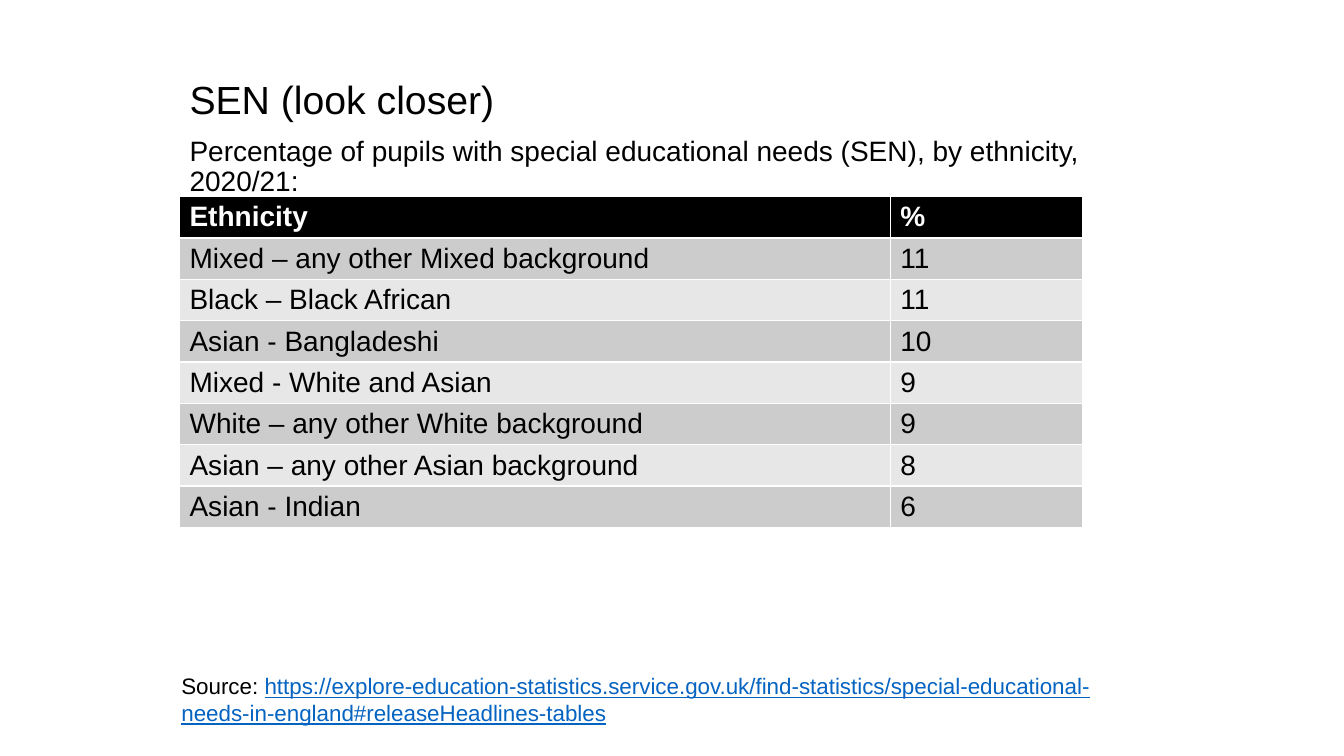
from pptx import Presentation
from pptx.dml.color import RGBColor
from pptx.enum import text
from pptx.util import Inches, Pt

BLACK = RGBColor(0x00, 0x00, 0x00)
WHITE = RGBColor(0xFF, 0xFF, 0xFF)
DARK = RGBColor(0xCC, 0xCC, 0xCC)
LIGHT = RGBColor(0xE7, 0xE7, 0xE7)
BLUE = RGBColor(0x05, 0x63, 0xC1)


def style(run, size, color=BLACK, bold=False):
    run.font.name = "Arial"
    run.font.size = Pt(size)
    run.font.color.rgb = color
    run.font.bold = bold


deck = Presentation()
deck.slide_width = Inches(13.33)
deck.slide_height = Inches(7.5)
slide = deck.slides.add_slide(deck.slide_layouts[0])
title = slide.shapes.title.element
title.getparent().remove(title)

intro = slide.placeholders[1]
intro.left, intro.top = Inches(1.78), Inches(0.75)
intro.width, intro.height = Inches(10), Inches(5.8)
frame = intro.text_frame
frame.text = (
    "SEN (look closer)\n"
    "Percentage of pupils with special educational needs (SEN), by ethnicity, 2020/21:"
)
frame.auto_size = text.MSO_AUTO_SIZE.NONE
frame.vertical_anchor = text.MSO_ANCHOR.TOP
for para, size in zip(frame.paragraphs, (28, 20)):
    para.alignment = text.PP_ALIGN.LEFT
    para.line_spacing = 0.9
    para.space_before = Pt(10)
    style(para.runs[0], size)

rows = [
    ("Ethnicity", "%"),
    ("Mixed – any other Mixed background", "11"),
    ("Black – Black African", "11"),
    ("Asian - Bangladeshi", "10"),
    ("Mixed - White and Asian", "9"),
    ("White – any other White background", "9"),
    ("Asian – any other Asian background", "8"),
    ("Asian - Indian", "6"),
]
table = slide.shapes.add_table(
    len(rows), 2, Inches(1.78), Inches(1.95), Inches(8.96), Inches(3.28)
).table
for col, width in zip(table.columns, (7.05, 1.91)):
    col.width = Inches(width)
for i, row in enumerate(rows):
    table.rows[i].height = Inches(0.41)
    head = i == 0
    for j, value in enumerate(row):
        cell = table.cell(i, j)
        cell.text_frame.text = value
        cell.fill.solid()
        cell.fill.fore_color.rgb = BLACK if head else (LIGHT, DARK)[i % 2]
        style(cell.text_frame.paragraphs[0].runs[0], 20, WHITE if head else BLACK, head)

source = slide.shapes.add_textbox(Inches(1.7), Inches(6.62), Inches(9.69), Inches(0.64))
source.text_frame.word_wrap = True
para = source.text_frame.paragraphs[0]
para.text = "Source: "
style(para.runs[0], 16)
link = para.add_run()
link.text = (
    "https://explore-education-statistics.service.gov.uk/find-statistics/"
    "special-educational-needs-in-england#releaseHeadlines-tables"
)
style(link, 16, BLUE)
link.font.underline = True

deck.save("out.pptx")
